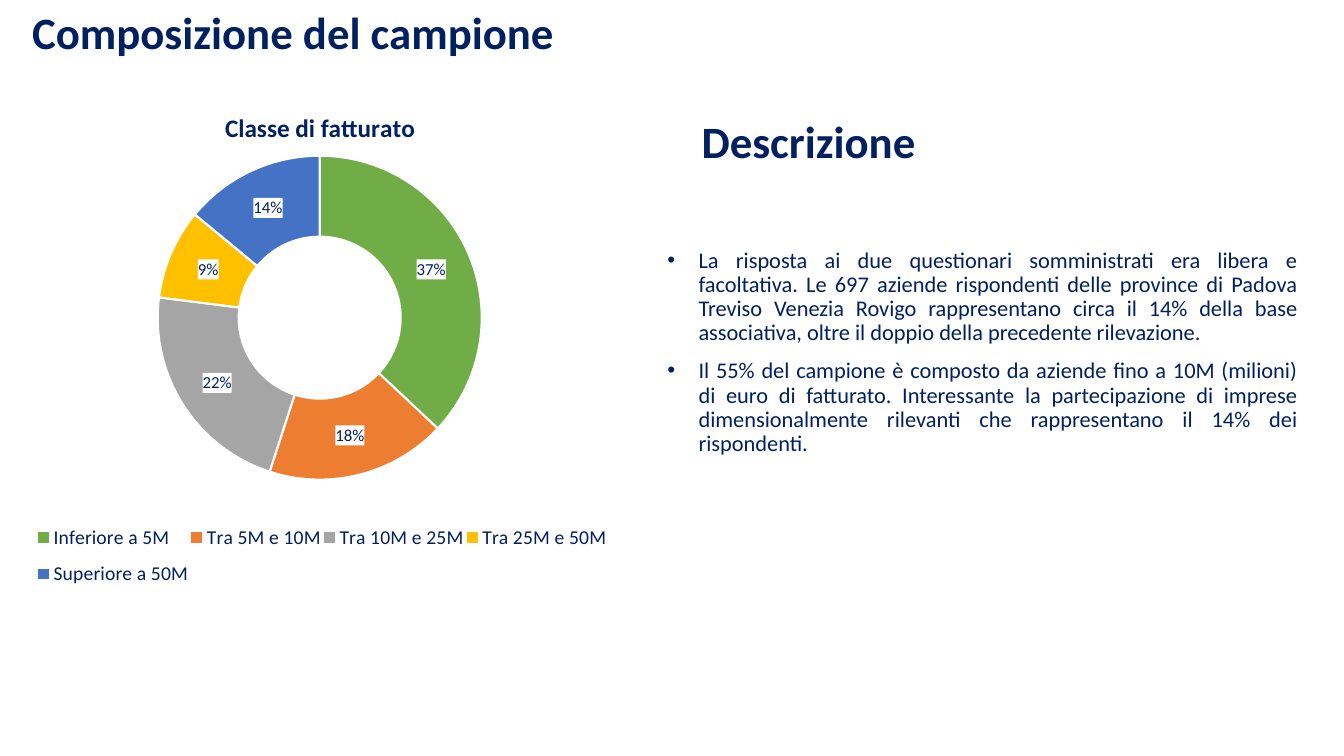
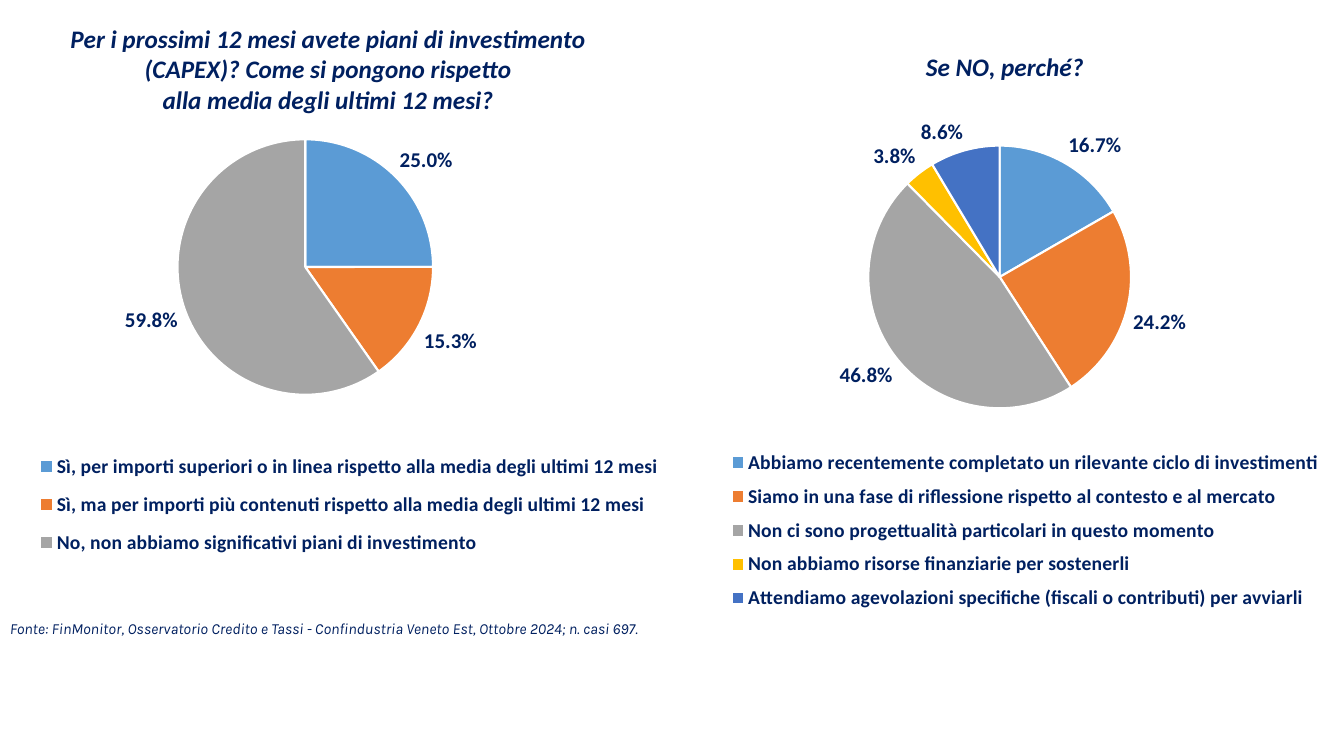
from lxml import etree
from pptx import Presentation
from pptx import util as u
from pptx.chart.data import CategoryChartData
from pptx.dml.color import RGBColor
from pptx.enum import chart as ch, text as tx
from pptx.oxml import parse_xml
from pptx.oxml.ns import nsdecls, qn

COLORS = {
    "navy": "002060", "white": "FFFFFF", "green": "70AD47", "orange": "ED7D31",
    "grey": "A5A5A5", "gold": "FFC000", "blue": "4472C4", "sky": "5B9BD5",
}
FONT = "Calibri"
SLICES = ["sky", "orange", "grey", "gold", "blue"]


def rgb(name):
    return RGBColor.from_string(COLORS[name])


def style_font(font, size, bold=False, italic=False, face=FONT, color="navy"):
    font.name, font.size = face, u.Pt(size)
    font.bold, font.italic = bold, italic
    font.color.rgb = rgb(color)


def write(frame, lines, align=None, spacing=None, before=0, bullet=None, **font):
    """Fill a text frame with one paragraph per line."""
    for i, line in enumerate(lines):
        para = frame.paragraphs[0] if i == 0 else frame.add_paragraph()
        if bullet:
            props = para._p.get_or_add_pPr()
            indent = u.Inches(0.31)
            props.set("marL", str(indent))
            props.set("indent", str(-indent))
            etree.SubElement(props, qn("a:buFont")).set("typeface", "Arial")
            etree.SubElement(props, qn("a:buChar")).set("char", bullet)
        if align is not None:
            para.alignment = align
        if spacing:
            para.line_spacing = spacing
        if before and i:
            para.space_before = u.Pt(before)
        run = para.add_run()
        run.text = line
        style_font(run.font, **font)


def place(parent, index, inner=False, **box):
    """Set the manual layout of a chart part, as fractions of the chart."""
    for old in parent.findall(qn("c:layout")):
        parent.remove(old)
    layout = parse_xml(f"<c:layout {nsdecls('c')}><c:manualLayout/></c:layout>")
    settings = [("layoutTarget", "inner")] if inner else []
    settings += [("xMode", "edge"), ("yMode", "edge"), *box.items()]
    for tag, value in settings:
        etree.SubElement(layout[0], qn(f"c:{tag}")).set("val", str(value))
    parent.insert(index, layout)


class Deck:
    def __init__(self):
        self.prs = Presentation()
        self.prs.slide_width = u.Inches(13.33)
        self.prs.slide_height = u.Inches(7.5)
        self.slide = None

    def new_slide(self):
        self.slide = self.prs.slides.add_slide(self.prs.slide_layouts[6])

    def text(self, box, *lines, anchor=tx.MSO_ANCHOR.TOP, **style):
        frame = self.slide.shapes.add_textbox(*map(u.Inches, box)).text_frame
        frame.word_wrap = True
        frame.vertical_anchor = anchor
        write(frame, lines, **style)

    def heading(self, box, line):
        self.text(box, line, anchor=tx.MSO_ANCHOR.MIDDLE, spacing=0.9, size=32, bold=True)

    def round_chart(self, kind, box, title, shares, colors, plot, legend, title_at,
                    number_format, label_size, italic_title=False, bold=False,
                    label_position=None, label_fill=None):
        """Add a pie or doughnut; plot, legend and title_at are layout fractions."""
        data = CategoryChartData(number_format=number_format)
        data.categories = list(shares)
        data.add_series("Series 1", list(shares.values()))
        chart = self.slide.shapes.add_chart(kind, *map(u.Inches, box), data).chart
        style_font(chart.font, 10)

        write(chart.chart_title.text_frame, title, size=18, bold=True, italic=italic_title)
        chart.chart_title.include_in_layout = False
        place(chart.chart_title._element, 1, **title_at)

        chart.has_legend = True
        chart.legend.position = ch.XL_LEGEND_POSITION.BOTTOM
        chart.legend.include_in_layout = False
        style_font(chart.legend.font, 14, bold=bold)
        place(chart.legend._element, 1, **legend)
        place(chart._chartSpace.chart.plotArea, 0, inner=True, **plot)

        chart.plots[0].vary_by_categories = True
        series = chart.plots[0].series[0]
        for i, color in enumerate(colors[:len(shares)]):
            part = series.points[i].format
            part.fill.solid()
            part.fill.fore_color.rgb = rgb(color)
            part.line.color.rgb = rgb("white")
            part.line.width = u.Pt(1.5)

        labels = series.data_labels
        labels.show_value = True
        labels.number_format = number_format
        labels.number_format_is_linked = False
        style_font(labels.font, label_size, bold=bold)
        if label_position is not None:
            labels.position = label_position
        if label_fill:
            fill = parse_xml(
                f'<c:spPr {nsdecls("c", "a")}><a:solidFill>'
                f'<a:srgbClr val="{COLORS[label_fill]}"/></a:solidFill></c:spPr>')
            labels._element.find(qn("c:txPr")).addprevious(fill)

    def survey_pie(self, left, title, shares, **layout):
        self.round_chart(ch.XL_CHART_TYPE.PIE, (left, 0, 6.67, 6.34), title, shares, SLICES,
                         number_format="0.0%", label_size=15, italic_title=True, bold=True,
                         label_position=ch.XL_LABEL_POSITION.OUTSIDE_END, **layout)


def sample_slide(deck):
    deck.new_slide()
    deck.heading((6.86, 0.7, 5.77, 1.45), "Descrizione")
    deck.text(
        (6.52, 2.42, 6.45, 2.09),
        "La risposta ai due questionari somministrati era libera e facoltativa. "
        "Le 697 aziende rispondenti delle province di Padova Treviso Venezia Rovigo "
        "rappresentano circa il 14% della base associativa, oltre il doppio della "
        "precedente rilevazione.",
        "Il 55% del campione è composto da aziende fino a 10M (milioni) di euro di "
        "fatturato. Interessante la partecipazione di imprese dimensionalmente "
        "rilevanti che rappresentano il 14% dei rispondenti.",
        align=tx.PP_ALIGN.JUSTIFY, spacing=0.9, before=10, bullet="•", size=16)
    turnover = {"Inferiore a 5M": 0.37, "Tra 5M e 10M": 0.18, "Tra 10M e 25M": 0.22,
                "Tra 25M e 50M": 0.09, "Superiore a 50M": 0.14}
    deck.round_chart(
        ch.XL_CHART_TYPE.DOUGHNUT, (0.23, 0.79, 5.93, 5.25), ["Classe di fatturato"],
        turnover, ["green", *SLICES[1:]], number_format="0%", label_size=12,
        label_fill="white", title_at=dict(x=0.33, y=0.05),
        plot=dict(x=0.225, y=0.135, w=0.542, h=0.63),
        legend=dict(x=0.02, y=0.82, w=0.96, h=0.16))
    deck.heading((0.22, 0, 11.89, 0.7), "Composizione del campione")


def investment_slide(deck):
    deck.new_slide()
    plans = {
        "Sì, per importi superiori o in linea rispetto alla media degli ultimi 12 mesi": 0.25,
        "Sì, ma per importi più contenuti rispetto alla media degli ultimi 12 mesi": 0.153,
        "No, non abbiamo significativi piani di investimento": 0.598,
    }
    deck.survey_pie(
        0, ["Per i prossimi 12 mesi avete piani di investimento (CAPEX)? "
            "Come si pongono rispetto", "alla media degli ultimi 12 mesi?"], plans,
        title_at=dict(x=0.1, y=0.03), plot=dict(x=0.264, y=0.218, w=0.38, h=0.4),
        legend=dict(x=0.04, y=0.69, w=0.96, h=0.2))
    reasons = {
        "Abbiamo recentemente completato un rilevante ciclo di investimenti": 0.167,
        "Siamo in una fase di riflessione rispetto al contesto e al mercato": 0.242,
        "Non ci sono progettualità particolari in questo momento": 0.468,
        "Non abbiamo risorse finanziarie per sostenerli": 0.038,
        "Attendiamo agevolazioni specifiche (fiscali o contributi) per avviarli": 0.086,
    }
    deck.survey_pie(
        6.67, ["Se NO, perché?"], reasons,
        title_at=dict(x=0.37, y=0.07), plot=dict(x=0.291, y=0.228, w=0.391, h=0.411),
        legend=dict(x=0.06, y=0.69, w=0.93, h=0.28))
    deck.text(
        (0, 6.09, 6.97, 0.29),
        "Fonte: FinMonitor, Osservatorio Credito e Tassi - Confindustria Veneto Est, "
        "Ottobre 2024; n. casi 697.",
        size=11, italic=True, face="Karla")


def main():
    deck = Deck()
    sample_slide(deck)
    investment_slide(deck)
    deck.prs.save("out.pptx")


if __name__ == "__main__":
    main()
